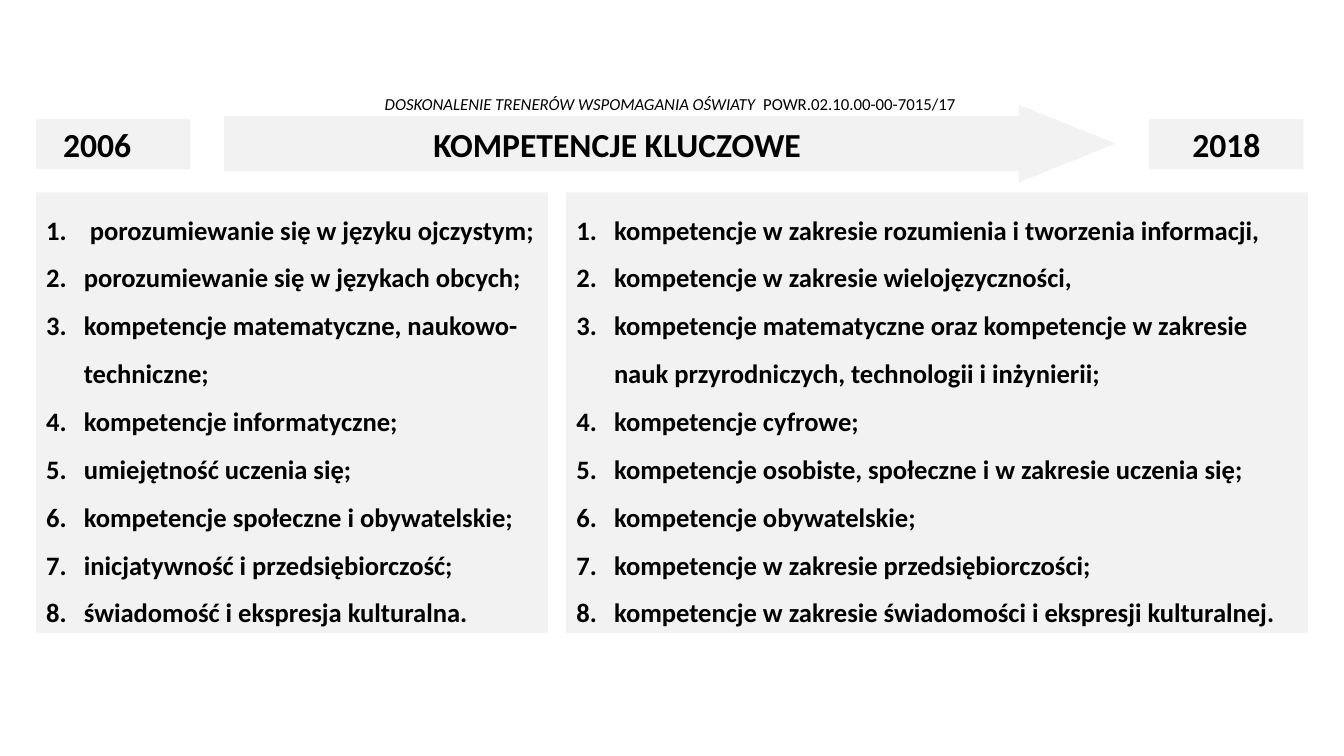
"""Build the slide comparing the key competences of 2006 and 2018."""
from lxml.etree import SubElement
from pptx import Presentation
from pptx.dml.color import RGBColor
from pptx.enum.shapes import MSO_SHAPE as Shape
from pptx.enum.text import MSO_ANCHOR as Anchor, MSO_AUTO_SIZE as AutoSize, PP_ALIGN as Align
from pptx.oxml.ns import qn
from pptx.util import Cm, Pt

GREY = RGBColor(0xF2, 0xF2, 0xF2)
BLACK = RGBColor(0, 0, 0)
LEFT = 0.91
LABEL_TOP, LABEL_WIDTH, LABEL_HEIGHT = 3, 3.89, 1.27
LIST_TOP, LIST_HEIGHT = 4.85, 11.1
INDENT = Cm(0.95)


def place(shape, left, top, width, height):
    shape.left, shape.top, shape.width, shape.height = map(Cm, (left, top, width, height))


def style(paragraph, size, bold):
    font = paragraph.font
    font.name, font.size, font.bold = "Calibri", Pt(size), bold
    font.color.rgb = BLACK


presentation = Presentation()
presentation.slide_width, presentation.slide_height = Cm(33.87), Cm(19.05)
slide = presentation.slides.add_slide(presentation.slide_layouts[3])

title = slide.shapes.title
place(title, 2.34, 0, 29.1, 3)
title.text_frame.vertical_anchor = Anchor.BOTTOM
title.text_frame.auto_size = AutoSize.NONE
paragraph = title.text_frame.paragraphs[0]
paragraph.alignment = Align.CENTER
paragraph.line_spacing = 0.9
style(paragraph, 12, False)
for text, italic in (("DOSKONALENIE TRENERÓW WSPOMAGANIA OŚWIATY  ", True),
                     ("POWR.02.10.00-00-7015/17", False)):
    run = paragraph.add_run()
    run.text = text
    run.font.italic = italic

competences_2006 = [
    " porozumiewanie się w języku ojczystym;",
    "porozumiewanie się w językach obcych;",
    "kompetencje matematyczne, naukowo-techniczne;",
    "kompetencje informatyczne;",
    "umiejętność uczenia się;",
    "kompetencje społeczne i obywatelskie;",
    "inicjatywność i przedsiębiorczość;",
    "świadomość i ekspresja kulturalna.",
]
competences_2018 = [
    "kompetencje w zakresie rozumienia i tworzenia informacji,",
    "kompetencje w zakresie wielojęzyczności,",
    "kompetencje matematyczne oraz kompetencje w zakresie nauk przyrodniczych, "
    "technologii i inżynierii;",
    "kompetencje cyfrowe;",
    "kompetencje osobiste, społeczne i w zakresie uczenia się;",
    "kompetencje obywatelskie;",
    "kompetencje w zakresie przedsiębiorczości;",
    "kompetencje w zakresie świadomości i ekspresji kulturalnej.",
]
for index, left, width, competences in ((1, LEFT, 12.9, competences_2006),
                                        (2, 14.27, 18.69, competences_2018)):
    body = slide.placeholders[index]
    place(body, left, LIST_TOP, width, LIST_HEIGHT)
    body.fill.solid()
    body.fill.fore_color.rgb = GREY
    frame = body.text_frame
    frame.auto_size = AutoSize.NONE
    frame.vertical_anchor = Anchor.TOP
    frame.text = "\n".join(competences)
    for paragraph in frame.paragraphs:
        paragraph.line_spacing = 1.5
        paragraph.space_before = Pt(0)
        properties = paragraph._p.get_or_add_pPr()
        properties.set("marL", str(INDENT))
        properties.set("indent", str(-INDENT))
        SubElement(properties, qn("a:buFont"), typeface="+mj-lt")
        SubElement(properties, qn("a:buAutoNum"), type="arabicPeriod")
        style(paragraph, 19, True)

arrow = slide.shapes.add_shape(Shape.RIGHT_ARROW, Cm(5.64), Cm(2.64), Cm(22.48), Cm(1.96))
arrow.adjustments[0], arrow.adjustments[1] = 0.71, 1.25
arrow.fill.solid()
arrow.fill.fore_color.rgb = GREY
arrow.line.fill.background()
arrow.shadow.inherit = False

for text, left, width, margin, alignment in (
        ("2006", LEFT, LABEL_WIDTH, 0.68, Align.LEFT),
        ("KOMPETENCJE KLUCZOWE", 10.67, 11.51, 0.25, Align.LEFT),
        ("2018", 28.96, LABEL_WIDTH, 0.25, Align.CENTER)):
    label = slide.shapes.add_shape(
        Shape.RECTANGLE, Cm(left), Cm(LABEL_TOP), Cm(width), Cm(LABEL_HEIGHT))
    label.fill.solid()
    label.fill.fore_color.rgb = GREY
    label.line.fill.background()
    label.shadow.inherit = False
    frame = label.text_frame
    frame.margin_left = Cm(margin)
    frame.vertical_anchor = Anchor.TOP
    frame.text = text
    frame.paragraphs[0].alignment = alignment
    style(frame.paragraphs[0], 24, True)

presentation.save("out.pptx")
